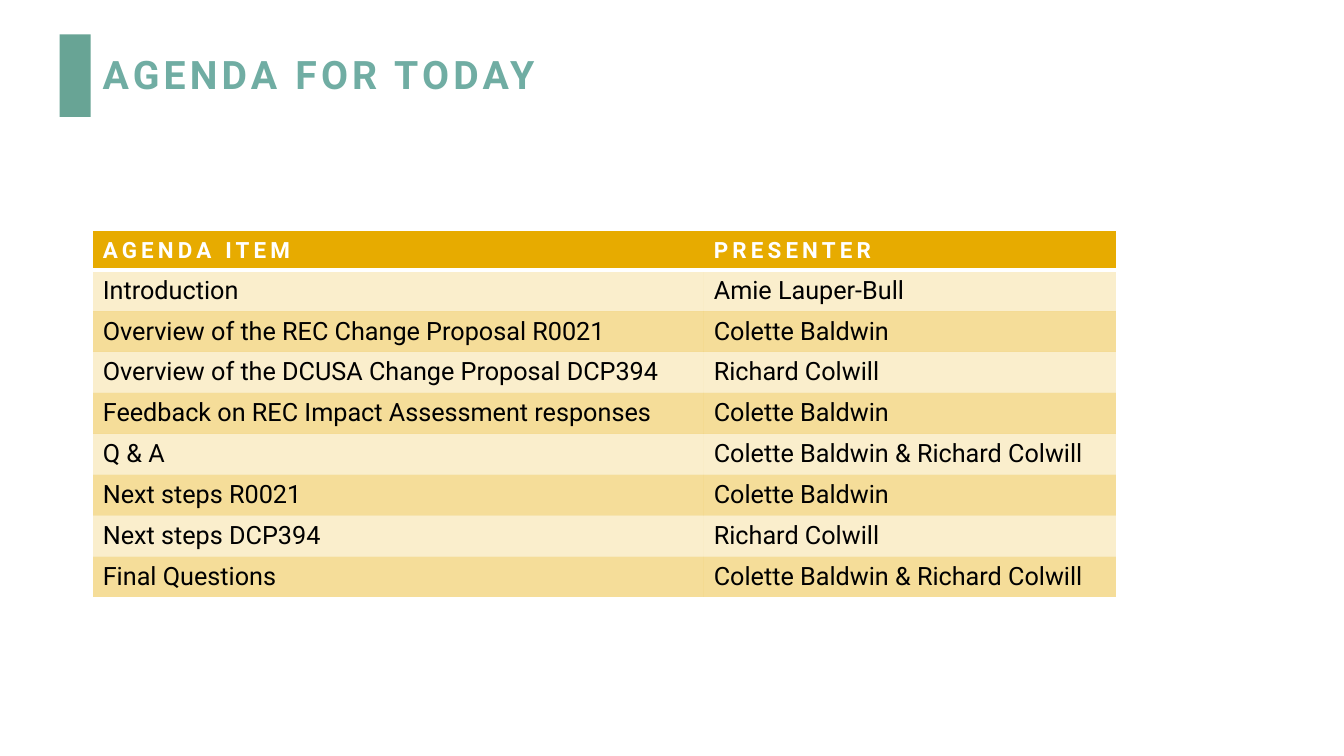
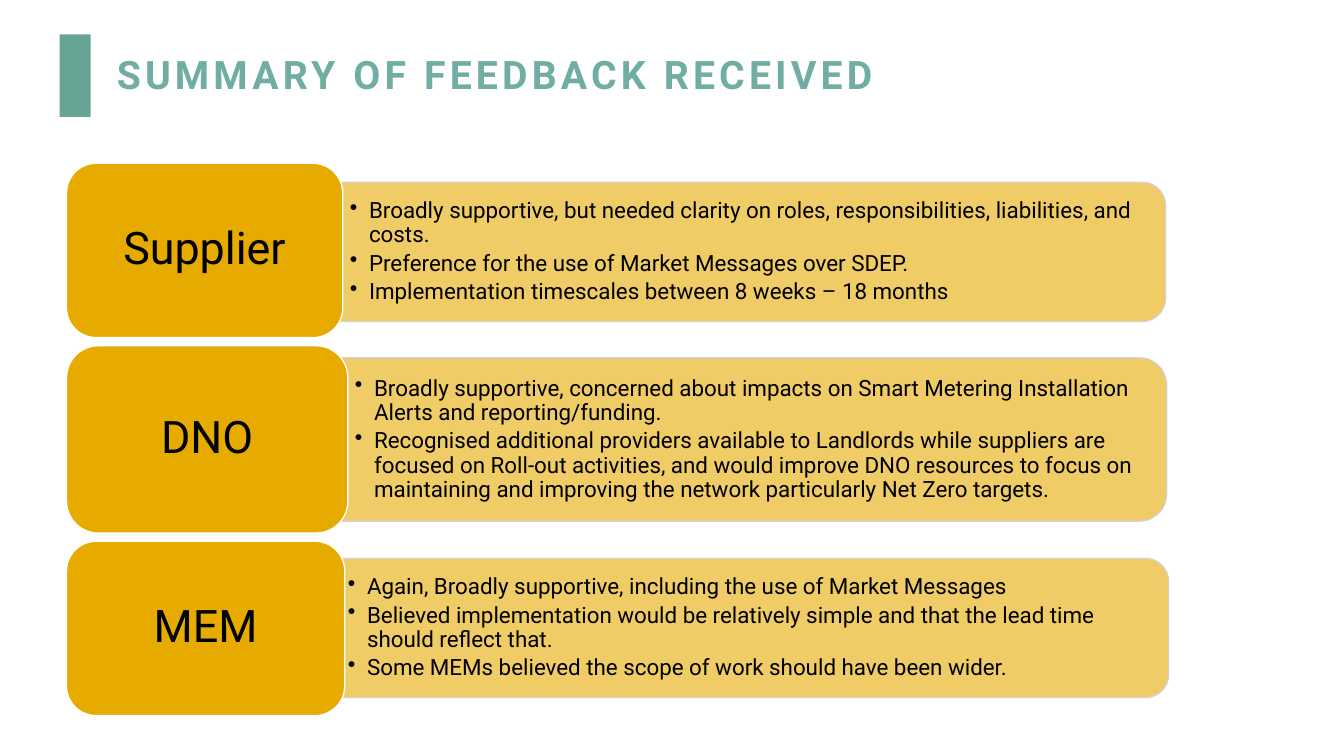
"""Build the agenda and feedback slides with one shared style."""
import dataclasses
import math

import lxml.etree
import pptx
import pptx.dml.color
import pptx.enum.shapes
import pptx.enum.text
import pptx.oxml.ns
import pptx.util

Inches = pptx.util.Inches
Align = pptx.enum.text.PP_ALIGN
Anchor = pptx.enum.text.MSO_ANCHOR
Preset = pptx.enum.shapes.MSO_SHAPE


@dataclasses.dataclass(frozen=True)
class Theme:
    """Colours, font and type sizes of the deck."""
    font: str = "Roboto"
    bar: str = "68A495"
    title: str = "70ADA3"
    gold: str = "E7AB00"
    white: str = "FFFFFF"
    black: str = "000000"
    outline: str = "D7CDCD"
    title_size: int = 28
    label_size: int = 32
    cell_size: int = 18
    small_size: int = 16
    tracking: int = 300
    light_band: int = 20
    dark_band: int = 40
    panel_tint: int = 60
    outline_tint: int = 90


THEME = Theme()


def add_node(parent, tag, **attributes):
    """Append a drawing element with its attributes."""
    node = lxml.etree.SubElement(parent, pptx.oxml.ns.qn(tag))
    for name, value in attributes.items():
        node.set(name, str(value))
    return node


def paint(fill, owner, color, opacity=100):
    """Fill with a colour, transparent when opacity is below 100."""
    fill.solid()
    fill.fore_color.rgb = pptx.dml.color.RGBColor.from_string(color)
    if opacity < 100:
        solid = owner.find(pptx.oxml.ns.qn("a:solidFill"))
        add_node(solid[0], "a:alpha", val=opacity * 1000)


def write(frame, texts, size, color=THEME.black, bold=False, tracking=0, align=Align.LEFT,
          spacing=None, after=0, indent=0, bullet=False, margins=None):
    """Write paragraphs into a text frame in one format."""
    frame.word_wrap = True
    frame.vertical_anchor = Anchor.MIDDLE
    if margins:
        (frame.margin_left, frame.margin_top,
         frame.margin_right, frame.margin_bottom) = map(Inches, margins)
    for index, text in enumerate(texts):
        para = frame.add_paragraph() if index else frame.paragraphs[0]
        para.alignment = align
        para.line_spacing = spacing
        para.space_after = pptx.util.Pt(after)
        properties = para._p.get_or_add_pPr()
        properties.set("marL", str(Inches(indent)))
        properties.set("indent", str(Inches(-indent if bullet else 0)))
        if bullet:
            add_node(properties, "a:buChar", char="•")
        span = para.add_run()
        span.text = text
        span.font.name = THEME.font
        span.font.size = pptx.util.Pt(size)
        span.font.bold = bold
        span.font.color.rgb = pptx.dml.color.RGBColor.from_string(color)
        span._r.get_or_add_rPr().set("spc", str(tracking))


class Deck:
    """Hold the presentation and the current page."""

    def __init__(self):
        """Start an empty widescreen presentation."""
        self.file = pptx.Presentation()
        self.file.slide_width = Inches(13.33)
        self.file.slide_height = Inches(7.5)
        self.page = None

    def add_page(self, title, indent=0):
        """Add a page with its side bar and title."""
        self.page = self.file.slides.add_slide(self.file.slide_layouts[6])
        self.add_box(Preset.RECTANGLE, 0.59, 0.34, 0.31, 0.82, THEME.bar)
        box = self.page.shapes.add_textbox(*map(Inches, (0.92, 0.4, 10.15, 0.72)))
        write(box.text_frame, [title], THEME.title_size, THEME.title, bold=True,
              tracking=THEME.tracking, spacing=0.9, indent=indent)

    def add_box(self, preset, left, top, width, height, color):
        """Add a filled preset shape without outline."""
        box = self.page.shapes.add_shape(preset, *map(Inches, (left, top, width, height)))
        box.shadow.inherit = False
        paint(box.fill, box._element.spPr, color)
        box.line.fill.background()
        return box

    def add_label(self, text, left, top, width, height):
        """Add a rounded heading box."""
        box = self.add_box(Preset.ROUNDED_RECTANGLE, left, top, width, height, THEME.gold)
        box.adjustments[0] = 0.17
        paint(box.line.fill, box.line._ln, THEME.white)
        box.line.width = pptx.util.Pt(1)
        write(box.text_frame, [text], THEME.label_size, align=Align.CENTER, spacing=0.9)

    def add_panel(self, texts, left, top, width, height, margin):
        """Add a bulleted panel rounded on its right side."""
        right, bottom, radius = left + width, top + height, height / 6
        corners = [(top + radius, -90), (bottom - radius, 0)]
        arc = [(right - radius + radius * math.cos(math.radians(start + step)),
                center + radius * math.sin(math.radians(start + step)))
               for center, start in corners for step in range(0, 91, 6)]
        outline = [(Inches(x), Inches(y)) for x, y in arc + [(left, bottom)]]
        builder = self.page.shapes.build_freeform(Inches(left), Inches(top))
        builder.add_line_segments(outline, close=True)
        box = builder.convert_to_shape()
        box.shadow.inherit = False
        paint(box.fill, box._element.spPr, THEME.gold, THEME.panel_tint)
        paint(box.line.fill, box.line._ln, THEME.outline, THEME.outline_tint)
        box.line.width = pptx.util.Pt(1)
        write(box.text_frame, texts, THEME.small_size, spacing=0.9, after=3, indent=0.19,
              bullet=True, margins=(margin, 0.1, margin + 0.07, 0.1))

    def add_borders(self, cell, widths):
        """Set the left, right, top and bottom borders; zero hides one."""
        properties = cell._tc.get_or_add_tcPr()
        for index, (side, width) in enumerate(zip("LRTB", widths)):
            line = add_node(properties, f"a:ln{side}", w=pptx.util.Pt(width))
            if width:
                add_node(add_node(line, "a:solidFill"), "a:srgbClr", val=THEME.white)
            else:
                add_node(line, "a:noFill")
            properties.insert(index, line)

    def add_table(self, rows, left, top, columns, header_height, row_height):
        """Add a table with a header and two alternating bands."""
        height = header_height + row_height * (len(rows) - 1)
        table = self.page.shapes.add_table(
            len(rows), len(columns), *map(Inches, (left, top, sum(columns), height))).table
        table.first_row = table.horz_banding = False
        for column, width in zip(table.columns, columns):
            column.width = Inches(width)
        for r, texts in enumerate(rows):
            table.rows[r].height = Inches(row_height if r else header_height)
            for c, text in enumerate(texts):
                cell = table.cell(r, c)
                cell.vertical_anchor = Anchor.MIDDLE
                band = THEME.light_band if r % 2 else THEME.dark_band
                paint(cell.fill, cell._tc.tcPr, THEME.gold, band if r else 100)
                self.add_borders(cell, (int(c == 0), int(c == len(columns) - 1),
                                        {0: 1, 1: 3}.get(r, 0),
                                        {0: 3, len(rows) - 1: 1}.get(r, 0)))
                look = {"size": THEME.cell_size} if r else {
                    "size": THEME.small_size, "color": THEME.white,
                    "bold": True, "tracking": THEME.tracking}
                write(cell.text_frame, [text], **look)


AGENDA = [
    ("AGENDA ITEM", "PRESENTER"),
    ("Introduction", "Amie Lauper-Bull"),
    ("Overview of the REC Change Proposal R0021", "Colette Baldwin"),
    ("Overview of the DCUSA Change Proposal DCP394", "Richard Colwill"),
    ("Feedback on REC Impact Assessment responses", "Colette Baldwin"),
    ("Q & A", "Colette Baldwin & Richard Colwill"),
    ("Next steps R0021", "Colette Baldwin"),
    ("Next steps DCP394", "Richard Colwill"),
    ("Final Questions", "Colette Baldwin & Richard Colwill"),
]

FEEDBACK = [
    ("Supplier", (0.66, 1.62, 2.74, 1.73), (3.33, 1.81, 8.23, 1.38), 0.14, [
        "Broadly supportive, but needed clarity on roles, responsibilities, liabilities, "
        "and costs.",
        "Preference for the use of Market Messages over SDEP.",
        "Implementation timescales between 8 weeks – 18 months"]),
    ("DNO", (0.66, 3.43, 2.79, 1.86), (3.38, 3.55, 8.19, 1.62), 0.14, [
        "Broadly supportive, concerned about impacts on Smart Metering Installation "
        "Alerts and reporting/funding.",
        "Recognised additional providers available to Landlords while suppliers are "
        "focused on Roll-out activities, and would improve DNO resources to focus on "
        "maintaining and improving the network particularly Net Zero targets."]),
    ("MEM", (0.66, 5.37, 2.76, 1.73), (3.38, 5.54, 8.21, 1.38), 0.07, [
        "Again, Broadly supportive, including the use of Market Messages",
        "Believed implementation would be relatively simple and that the lead time "
        "should reflect that.",
        "Some MEMs believed the scope of work should have been wider."]),
]


def main():
    """Build both pages and save the file."""
    deck = Deck()
    deck.add_page("AGENDA FOR TODAY")
    deck.add_table(AGENDA, 0.92, 2.29, (6.06, 4.09), 0.39, 3.25 / 8)
    deck.add_page("SUMMARY OF FEEDBACK RECEIVED", indent=0.14)
    for name, label_place, panel_place, margin, points in FEEDBACK:
        deck.add_panel(points, *panel_place, margin)
        deck.add_label(name, *label_place)
    deck.file.save("out.pptx")


if __name__ == "__main__":
    main()
